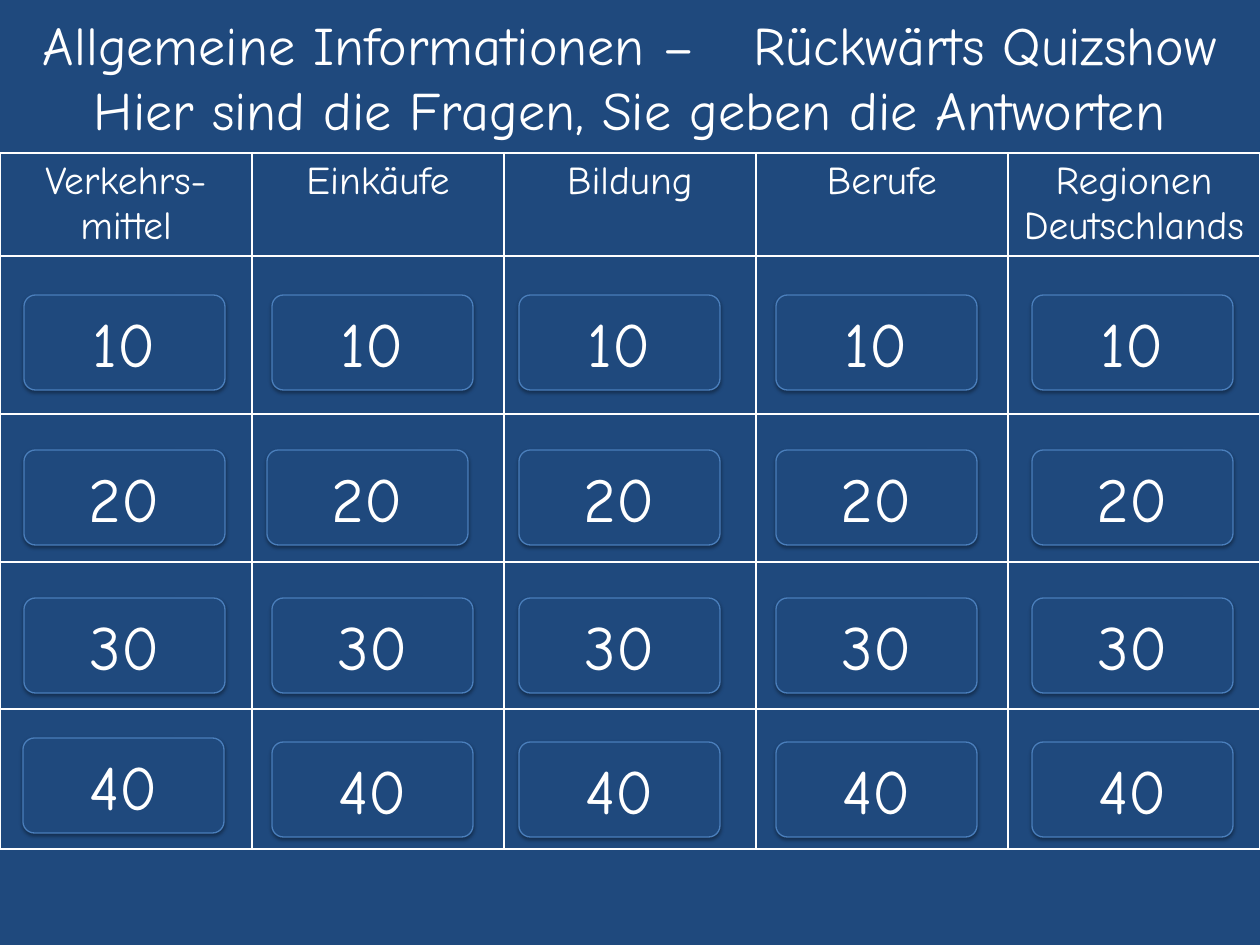
from dataclasses import dataclass
from itertools import product

from lxml import etree
from pptx import Presentation
from pptx import util as u
from pptx.dml.color import RGBColor
from pptx.enum import shapes, text
from pptx.oxml import ns

PX = 10320  # EMU per px
SLIDE_W, SLIDE_H = 1260, 945


@dataclass(frozen=True)
class Theme:
    navy: str = "1F497D"
    white: str = "FFFFFF"
    tile_edge: str = "4A7EBB"
    shadow: str = "000000"
    font: str = "Comic Neue"
    title_pt: int = 44
    category_pt: int = 32
    points_pt: int = 51
    grid_pt: float = 2.13
    tile_edge_pt: float = 1.07


THEME = Theme()

HEADING = [
    ["Allgemeine Informationen –", " ", "Rückwärts Quizshow"],
    ["Hier sind die Fragen, Sie geben die Antworten"],
]
CATEGORIES = ["Verkehrs-mittel", "Einkäufe", "Bildung", "Berufe",
              "Regionen Deutschlands"]
POINTS = ["10", "20", "30", "40"]
ROW_HEIGHTS = [103, 158, 148, 147, 140]

# Tile offsets inside the board, with the two tiles that sit off the grid
TILE_LEFTS = [24, 272, 519, 776, 1032]
TILE_TOPS = [142, 297, 445, 589]
TILE_NUDGES = {(1, 1): (-5, 0), (3, 0): (-1, -4)}
TILE_W, TILE_H = 201, 95


def px(*lengths):
    return [u.Emu(length * PX) for length in lengths]


def rgb(value):
    return RGBColor.from_string(value)


def add_run(paragraph, words, size):
    paragraph.alignment = text.PP_ALIGN.CENTER
    run = paragraph.add_run()
    run.text = words
    run.font.name = THEME.font
    run.font.size = u.Pt(size)
    run.font.color.rgb = rgb(THEME.white)
    return run


def set_insets(target, side, top):
    target.margin_left, target.margin_right = px(side, side)
    target.margin_top, target.margin_bottom = px(top, top)


def xml_child(parent, tag, **attributes):
    return etree.SubElement(parent, ns.qn(tag), **attributes)


def place_heading(slide, left, top, width, height):
    title = slide.shapes.title
    title.left, title.top, title.width, title.height = px(left, top, width, height)
    frame = title.text_frame
    frame.word_wrap = True
    frame.auto_size = text.MSO_AUTO_SIZE.NONE
    frame.vertical_anchor = text.MSO_ANCHOR.TOP
    set_insets(frame, 12, 7)
    for index, parts in enumerate(HEADING):
        line = frame.paragraphs[0] if index == 0 else frame.add_paragraph()
        for part in parts:
            run = add_run(line, part, THEME.title_pt)
            if part == " ":  # widen the gap after the dash by 32 pt
                run.font._element.set("spc", "3200")


def draw_borders(cell):
    properties = cell._tc.get_or_add_tcPr()
    for position, side in enumerate(("a:lnL", "a:lnR", "a:lnT", "a:lnB")):
        border = etree.Element(ns.qn(side), w=str(u.Pt(THEME.grid_pt)))
        fill = xml_child(border, "a:solidFill")
        xml_child(fill, "a:srgbClr", val=THEME.white)
        properties.insert(position, border)


def place_board(slide, left, top, width, height):
    frame = slide.shapes.add_table(len(ROW_HEIGHTS), len(CATEGORIES),
                                   *px(left, top, width, height))
    board = frame.table
    board.first_row = board.horz_banding = False
    for column in board.columns:
        column.width = u.Emu(width * PX // len(CATEGORIES))
    for row, row_height in zip(board.rows, ROW_HEIGHTS):
        row.height = u.Emu(row_height * PX)
    for cell in board.iter_cells():
        cell.fill.solid()
        cell.fill.fore_color.rgb = rgb(THEME.navy)
        set_insets(cell, 6, 6)
        draw_borders(cell)
    for column, category in enumerate(CATEGORIES):
        paragraph = board.cell(0, column).text_frame.paragraphs[0]
        add_run(paragraph, category, THEME.category_pt)


def cast_shadow(tile):
    tile.shadow.inherit = False
    effects = tile._element.spPr.find(ns.qn("a:effectLst"))
    shadow = xml_child(effects, "a:outerShdw", blurRad=str(u.Pt(3)),
                       dist=str(u.Pt(1.8)), dir="5400000", rotWithShape="0")
    color = xml_child(shadow, "a:srgbClr", val=THEME.shadow)
    xml_child(color, "a:alpha", val="35000")


def place_tile(slide, points, left, top, width, height):
    tile = slide.shapes.add_shape(shapes.MSO_SHAPE.ROUNDED_RECTANGLE,
                                  *px(left, top, width, height))
    tile.adjustments[0] = 0.12
    tile.fill.solid()
    tile.fill.fore_color.rgb = rgb(THEME.navy)
    tile.line.color.rgb = rgb(THEME.tile_edge)
    tile.line.width = u.Pt(THEME.tile_edge_pt)
    cast_shadow(tile)
    frame = tile.text_frame
    frame.word_wrap = True
    frame.vertical_anchor = text.MSO_ANCHOR.MIDDLE
    set_insets(frame, 12, 7)
    add_run(frame.paragraphs[0], points, THEME.points_pt)


def place_tiles(slide, left, top):
    for row, column in product(range(len(POINTS)), range(len(CATEGORIES))):
        shift_x, shift_y = TILE_NUDGES.get((row, column), (0, 0))
        place_tile(slide, POINTS[row],
                   left + TILE_LEFTS[column] + shift_x,
                   top + TILE_TOPS[row] + shift_y,
                   TILE_W, TILE_H)


def main():
    deck = Presentation()
    deck.slide_width, deck.slide_height = px(SLIDE_W, SLIDE_H)
    slide = deck.slides.add_slide(deck.slide_layouts[5])  # title only
    background = slide.background.fill
    background.solid()
    background.fore_color.rgb = rgb(THEME.navy)

    board_top = 153
    place_heading(slide, 0, 4, SLIDE_W, 132)
    place_board(slide, 0, board_top, SLIDE_W, sum(ROW_HEIGHTS))
    place_tiles(slide, 0, board_top)
    deck.save("out.pptx")


if __name__ == "__main__":
    main()
